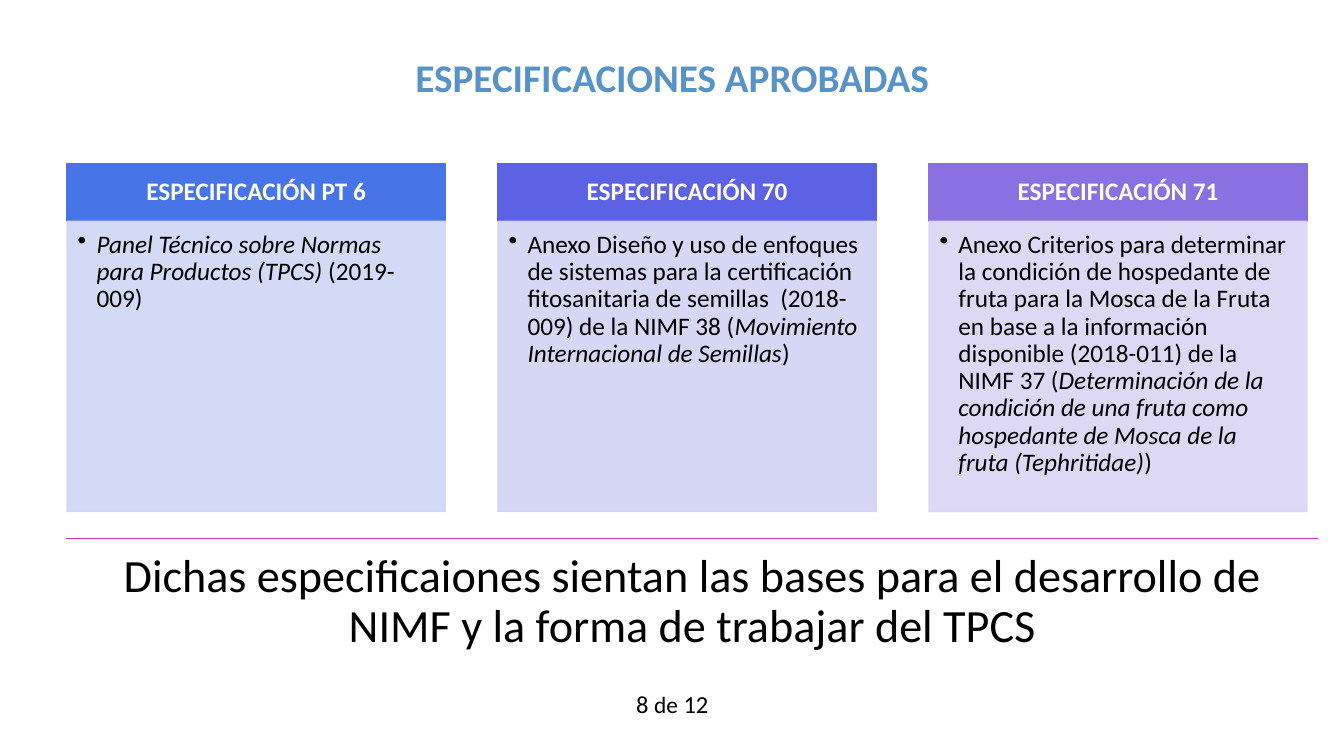
from lxml import etree
from pptx import Presentation
from pptx.dml.color import RGBColor
from pptx.enum.shapes import MSO_CONNECTOR, MSO_SHAPE
from pptx.enum.text import MSO_ANCHOR, PP_ALIGN
from pptx.oxml.ns import qn
from pptx.util import Pt

RECTANGLE = MSO_SHAPE.RECTANGLE
STRAIGHT = MSO_CONNECTOR.STRAIGHT
TOP, MIDDLE = MSO_ANCHOR.TOP, MSO_ANCHOR.MIDDLE
LEFT, CENTER = PP_ALIGN.LEFT, PP_ALIGN.CENTER

THEME = {
    "font": "Calibri",
    "title": "5792C9", "text": "000000", "on_header": "FFFFFF", "rule": "C830CC",
    "title_size": 28, "card_size": 18, "closing_size": 33,
    "page_size": 17.5, "page_word_size": 16.7,
}


def write(shape, spans, size, color, anchor=TOP, align=CENTER,
          margins=(7.2, 3.6, 7.2, 3.6), spacing=0.9, wrap=True, bullet=False):
    """Fill a shape with one paragraph of (text, font overrides) spans."""
    frame = shape.text_frame
    left, top, right, bottom = margins
    frame_format = {"word_wrap": wrap, "vertical_anchor": anchor,
                    "margin_left": Pt(left), "margin_top": Pt(top),
                    "margin_right": Pt(right), "margin_bottom": Pt(bottom)}
    for name, value in frame_format.items():
        setattr(frame, name, value)
    para = frame.paragraphs[0]
    para.alignment, para.line_spacing = align, spacing
    if bullet:
        properties = para._p.get_or_add_pPr()
        properties.set("marL", str(Pt(13.5)))
        properties.set("indent", str(Pt(-13.5)))
        etree.SubElement(properties, qn("a:buChar")).set("char", "•")
    for text, overrides in spans:
        span = para.add_run()
        span.text = text
        font_format = {"name": THEME["font"], "size": Pt(size), **overrides}
        for name, value in font_format.items():
            setattr(span.font, name, value)
        span.font.color.rgb = RGBColor.from_string(color)


def add_block(page, left, top, width, height, color, alpha=100):
    """Add a rectangle with fill and outline of one colour."""
    block = page.shapes.add_shape(RECTANGLE, Pt(left), Pt(top), Pt(width), Pt(height))
    block.shadow.inherit = False
    block.fill.solid()
    block.line.width = Pt(1)
    block.line.fill.solid()
    for paint in (block.fill, block.line.fill):
        paint.fore_color.rgb = RGBColor.from_string(color)
    if alpha < 100:
        for tint in block._element.spPr.iter(qn("a:srgbClr")):
            etree.SubElement(tint, qn("a:alpha")).set("val", str(alpha * 1000))
    return block


deck = Presentation()
deck.slide_width, deck.slide_height = Pt(960), Pt(540)
page = deck.slides.add_slide(deck.slide_layouts[6])

# Title
title = page.shapes.add_textbox(Pt(246.2), Pt(12.2), Pt(468), Pt(90))
write(title, [("ESPECIFICACIONES APROBADAS", {"bold": True})],
      THEME["title_size"], THEME["title"], anchor=MIDDLE)

# Specification cards: heading, header colour, body colour, body spans
ITALIC = {"italic": True}
cards = [
    ("ESPECIFICACIÓN PT 6", "4775E7", "CFD6F6", [
        ("Panel Técnico sobre Normas para Productos (TPCS)", ITALIC),
        (" (2019-009)", {})]),
    ("ESPECIFICACIÓN 70", "5D61E3", "D2D2F5", [
        ("Anexo Diseño y uso de enfoques de sistemas para la certificación "
         "fitosanitaria de semillas  (2018-009) de la NIMF 38 (", {}),
        ("Movimiento Internacional de Semillas", ITALIC),
        (")", {})]),
    ("ESPECIFICACIÓN 71", "8971E1", "DAD5F4", [
        ("Anexo Criterios para determinar la condición de hospedante de fruta "
         "para la Mosca de la Fruta en base a la información disponible "
         "(2018-011) de la NIMF 37 (", {}),
        ("Determinación de la condición de una fruta como hospedante de "
         "Mosca de la fruta (Tephritidae)", ITALIC),
        (")", {})]),
]
CARD_LEFT, CARD_TOP, CARD_WIDTH, CARD_PITCH = 48, 117, 270, 307.8
HEADER_HEIGHT, BODY_HEIGHT = 41, 207.4
for index, (heading, header_color, body_color, spans) in enumerate(cards):
    left = CARD_LEFT + index * CARD_PITCH
    header = add_block(page, left, CARD_TOP, CARD_WIDTH, HEADER_HEIGHT, header_color)
    write(header, [(heading, {"bold": True})], THEME["card_size"], THEME["on_header"],
          anchor=MIDDLE, margins=(10, 5.8, 10, 5.8))
    body = add_block(page, left, CARD_TOP + HEADER_HEIGHT, CARD_WIDTH, BODY_HEIGHT,
                     body_color, alpha=90)
    write(body, spans, THEME["card_size"], THEME["text"], align=LEFT,
          margins=(7.5, 7.5, 10, 11.5), bullet=True)

# Page number
page_number = page.shapes.add_textbox(Pt(435.6), Pt(486), Pt(89.3), Pt(33))
write(page_number,
      [("8 ", {}), ("de", {"size": Pt(THEME["page_word_size"])}), (" 12", {})],
      THEME["page_size"], THEME["text"], margins=(12, 6, 12, 6), spacing=1.0, wrap=False)

# Closing statement under its rule
RULE_LEFT, RULE_TOP, RULE_WIDTH = 47.5, 384.5, 894.2
rule = page.shapes.add_connector(STRAIGHT, Pt(RULE_LEFT), Pt(RULE_TOP),
                                 Pt(RULE_LEFT + RULE_WIDTH), Pt(RULE_TOP))
rule.line.width = Pt(1)
rule.line.color.rgb = RGBColor.from_string(THEME["rule"])
etree.SubElement(rule._element.spPr, qn("a:effectLst"))
closing = page.shapes.add_textbox(Pt(RULE_LEFT), Pt(RULE_TOP), Pt(RULE_WIDTH), Pt(90))
write(closing, [("Dichas especificaiones sientan las bases para el desarrollo de "
                 "NIMF y la forma de trabajar del TPCS", {})],
      THEME["closing_size"], THEME["text"], margins=(10, 10, 10, 10))

deck.save("out.pptx")
